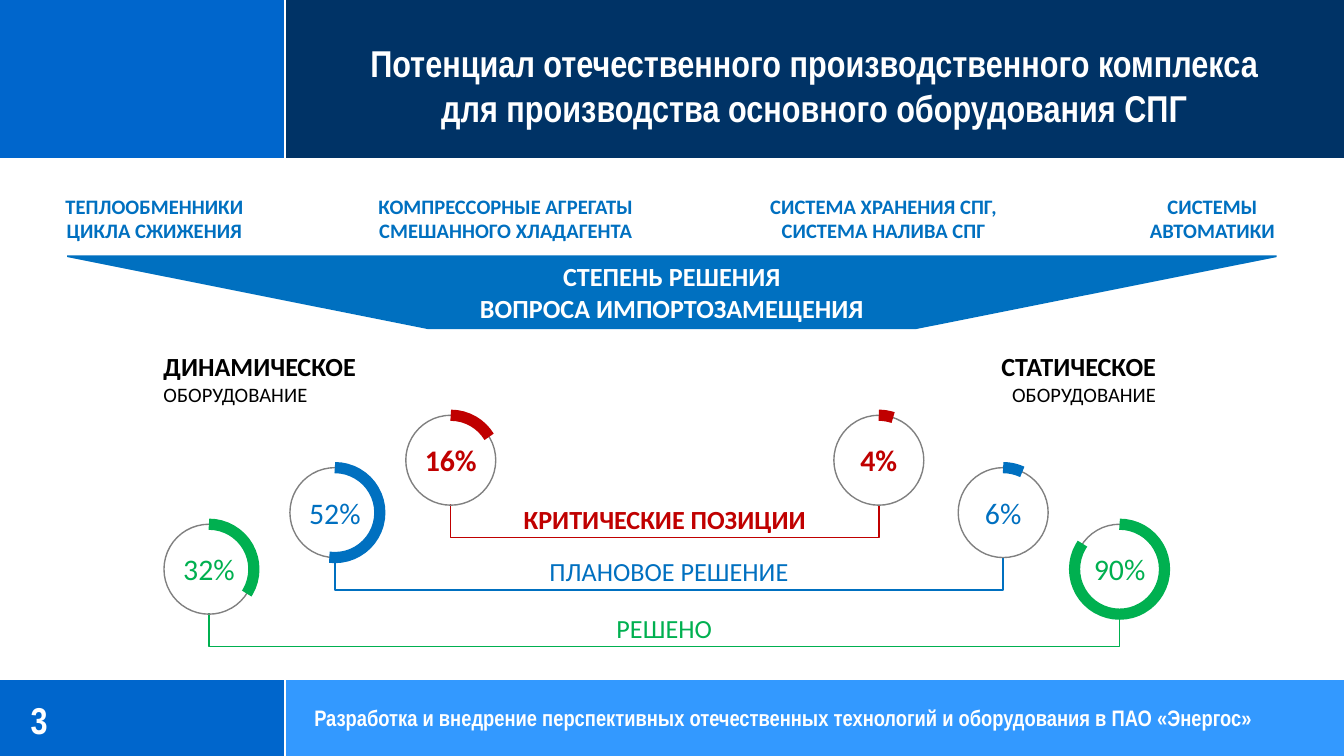
"""Builds the slide on import substitution for LNG equipment."""
from dataclasses import dataclass

from lxml import etree
from pptx import Presentation
from pptx.dml.color import RGBColor
from pptx.enum.shapes import MSO_CONNECTOR, MSO_SHAPE
from pptx.enum.text import MSO_ANCHOR, PP_ALIGN
from pptx.oxml.ns import qn
from pptx.util import Cm, Pt

STRAIGHT, ELBOW = MSO_CONNECTOR.STRAIGHT, MSO_CONNECTOR.ELBOW
RECT, OVAL, ARC = MSO_SHAPE.RECTANGLE, MSO_SHAPE.OVAL, MSO_SHAPE.ARC
LEFT, CENTER, RIGHT = PP_ALIGN.LEFT, PP_ALIGN.CENTER, PP_ALIGN.RIGHT
TOP, MIDDLE = MSO_ANCHOR.TOP, MSO_ANCHOR.MIDDLE

WHITE = RGBColor(0xFF, 0xFF, 0xFF)
BLACK = RGBColor(0x00, 0x00, 0x00)
GRAY = RGBColor(0x80, 0x80, 0x80)
NAVY = RGBColor(0x00, 0x33, 0x66)
ROYAL = RGBColor(0x00, 0x66, 0xCC)
SKY = RGBColor(0x33, 0x99, 0xFF)
BLUE = RGBColor(0x00, 0x70, 0xC0)
RED = RGBColor(0xC0, 0x00, 0x00)
GREEN = RGBColor(0x00, 0xB0, 0x50)

WIDTH, HEIGHT = 25.4, 14.29
SIDEBAR, HEADER, FOOTER = 5.38, 3.0, 12.85
RING = 1.7
DROP, STEP = 0.63, 0.03
ARC_UNIT = 0.6


@dataclass(frozen=True)
class Box:
    left: float
    top: float
    width: float
    height: float

    def lengths(self) -> tuple:
        return Cm(self.left), Cm(self.top), Cm(self.width), Cm(self.height)


@dataclass(frozen=True)
class Style:
    size: float
    color: RGBColor
    bold: bool = True
    face: str = "Calibri"
    align: PP_ALIGN = CENTER


@dataclass(frozen=True)
class Gauge:
    left: float
    value: str
    end_angle: float


@dataclass(frozen=True)
class Level:
    label: str
    color: RGBColor
    bold: bool
    top: float
    dynamic: Gauge
    static: Gauge


LEVELS = (
    Level("КРИТИЧЕСКИЕ ПОЗИЦИИ", RED, True, 7.85,
          Gauge(7.67, "16%", 328.7), Gauge(15.76, "4%", 288.6)),
    Level("ПЛАНОВОЕ РЕШЕНИЕ", BLUE, False, 8.84,
          Gauge(5.48, "52%", 97), Gauge(18.11, "6%", 295.2)),
    Level("РЕШЕНО", GREEN, False, 9.91,
          Gauge(3.1, "32%", 32.8), Gauge(20.31, "90%", 214.6)),
)
GROUPS = (
    (Box(1.04, 3.66, 3.76, 1.04), "ТЕПЛООБМЕННИКИ\nЦИКЛА СЖИЖЕНИЯ"),
    (Box(7.11, 3.66, 4.9, 1.04), "КОМПРЕССОРНЫЕ АГРЕГАТЫ\nСМЕШАННОГО ХЛАДАГЕНТА"),
    (Box(14.53, 3.66, 4.34, 1.04), "СИСТЕМА ХРАНЕНИЯ СПГ,\nСИСТЕМА НАЛИВА СПГ"),
    (Box(21.62, 3.66, 2.59, 1.04), "СИСТЕМЫ\nАВТОМАТИКИ"),
)
KINDS = (
    (Box(2.84, 6.5, 4.19, 1.37), "ДИНАМИЧЕСКОЕ", LEFT),
    (Box(18.52, 6.5, 3.58, 1.37), "СТАТИЧЕСКОЕ", RIGHT),
)
FUNNEL = ((1.27, 4.83), (24.13, 4.83), (24.13, 4.86),
          (17.32, 6.22), (8.08, 6.22), (1.27, 4.86))


def write(frame, text: str, *styles: Style, anchor=TOP, inset: bool = True) -> None:
    """Fill a text frame, the last style serving all remaining lines."""
    frame.text = text
    frame.word_wrap = True
    frame.vertical_anchor = anchor
    if not inset:
        frame.margin_left = frame.margin_right = 0
        frame.margin_top = frame.margin_bottom = 0
    for number, paragraph in enumerate(frame.paragraphs):
        style = styles[min(number, len(styles) - 1)]
        paragraph.alignment = style.align
        font = paragraph.font
        font.name, font.size, font.bold = style.face, Pt(style.size), style.bold
        font.color.rgb = style.color


def add_text(slide, box: Box, text: str, *styles: Style, **options) -> None:
    """Add a text box."""
    write(slide.shapes.add_textbox(*box.lengths()).text_frame, text, *styles, **options)


def paint(shape, color: RGBColor) -> None:
    """Give a shape a plain fill."""
    shape.shadow.inherit = False
    shape.fill.solid()
    shape.fill.fore_color.rgb = color
    shape.line.fill.background()


def outline(slide, kind, box: Box, color: RGBColor, weight: float):
    """Add an unfilled preset shape."""
    shape = slide.shapes.add_shape(kind, *box.lengths())
    shape.shadow.inherit = False
    shape.fill.background()
    shape.line.color.rgb = color
    shape.line.width = Pt(weight)
    return shape


def add_line(slide, kind, start: tuple, end: tuple, color: RGBColor, weight: float):
    """Add a connector without a shadow."""
    line = slide.shapes.add_connector(kind, *map(Cm, start + end))
    line.line.color.rgb = color
    line.line.width = Pt(weight)
    etree.SubElement(line._element.spPr, qn("a:effectLst"))
    return line


def add_bracket(slide, left: float, right: float, top: float, color: RGBColor) -> None:
    """Join two points with an elbow that dips below them."""
    middle, half = (left + right) / 2, (right - left) / 2
    bracket = add_line(slide, ELBOW, (middle + STEP / 2, top - half),
                       (middle - STEP / 2, top + half), color, 0.75)
    properties = bracket._element.spPr
    properties.find(qn("a:xfrm")).set("rot", str(270 * 60000))
    geometry = properties.find(qn("a:prstGeom"))
    adjustments = geometry.find(qn("a:avLst"))
    if adjustments is None:
        adjustments = etree.SubElement(geometry, qn("a:avLst"))
    etree.SubElement(adjustments, qn("a:gd"), name="adj1",
                     fmla=f"val {round(DROP / STEP * 100000)}")


def add_gauge(slide, gauge: Gauge, level: Level) -> None:
    """Draw a ring with its share as a thick arc."""
    ring = Box(gauge.left, level.top, RING, RING)
    outline(slide, OVAL, ring, GRAY, 0.75)
    add_text(slide, Box(gauge.left - 0.04, level.top + 0.38, 1.78, 0.93),
             gauge.value, Style(16, level.color, level.bold))
    share = outline(slide, ARC, ring, level.color, 6)
    share.adjustments[0] = 270 * ARC_UNIT
    share.adjustments[1] = gauge.end_angle * ARC_UNIT


def add_level(slide, level: Level) -> None:
    """Draw both gauges of a level with their bracket and label."""
    left, right = (g.left + RING / 2 for g in (level.dynamic, level.static))
    add_text(slide, Box((left + right) / 2 - 3.39, level.top + 1.54, 6.78, 0.86),
             level.label, Style(14, level.color, level.bold))
    add_bracket(slide, left, right, level.top + RING, level.color)
    for gauge in (level.dynamic, level.static):
        add_gauge(slide, gauge, level)


def add_frame(slide) -> None:
    """Draw the header and footer bands with their white dividers."""
    for top, height, color in ((0, HEADER, NAVY), (FOOTER, HEIGHT - FOOTER, SKY)):
        for left, right, fill in ((0, SIDEBAR, ROYAL), (SIDEBAR, WIDTH, color)):
            band = Box(left, top, right - left, height)
            paint(slide.shapes.add_shape(RECT, *band.lengths()), fill)
        add_line(slide, STRAIGHT, (SIDEBAR, top), (SIDEBAR, top + height), WHITE, 1.25)
    for y in (HEADER, FOOTER - 0.02):
        add_line(slide, STRAIGHT, (0, y), (WIDTH, y), WHITE, 1.25)


def main() -> None:
    """Build and save the slide."""
    deck = Presentation()
    deck.slide_width, deck.slide_height = Cm(WIDTH), Cm(HEIGHT)
    slide = deck.slides.add_slide(deck.slide_layouts[5])
    add_frame(slide)

    title = slide.shapes.title
    title.left, title.top, title.width, title.height = Box(5.99, 0.41, 18.8, 2.39).lengths()
    write(title.text_frame, "Потенциал отечественного производственного комплекса\n"
          "для производства основного оборудования СПГ",
          Style(20, WHITE, face="Arial Narrow"), anchor=MIDDLE, inset=False)
    slide.shapes._spTree.append(title._element)
    add_text(slide, Box(0.58, 12.95, 4.11, 1.32), "3",
             Style(20, WHITE, face="Arial Narrow", align=LEFT), anchor=MIDDLE, inset=False)
    add_text(slide, Box(5.94, 13.31, 19.46, 0.56),
             "Разработка и внедрение перспективных отечественных технологий "
             "и оборудования в ПАО «Энергос»",
             Style(12, WHITE, face="Arial Narrow", align=LEFT), inset=False)

    for box, name in GROUPS:
        add_text(slide, box, name, Style(11, BLUE), inset=False)
    for box, kind, align in KINDS:
        add_text(slide, box, f"{kind}\nОБОРУДОВАНИЕ", Style(14, BLACK, align=align),
                 Style(11, BLACK, False, align=align))
    for level in LEVELS:
        add_level(slide, level)

    start, *rest = [(Cm(x), Cm(y)) for x, y in FUNNEL]
    builder = slide.shapes.build_freeform(*start)
    builder.add_line_segments(rest)
    paint(builder.convert_to_shape(), BLUE)
    add_text(slide, Box(8.23, 4.8, 8.94, 1.45),
             "СТЕПЕНЬ РЕШЕНИЯ\nВОПРОСА ИМПОРТОЗАМЕЩЕНИЯ", Style(14, WHITE))
    deck.save("out.pptx")


if __name__ == "__main__":
    main()
